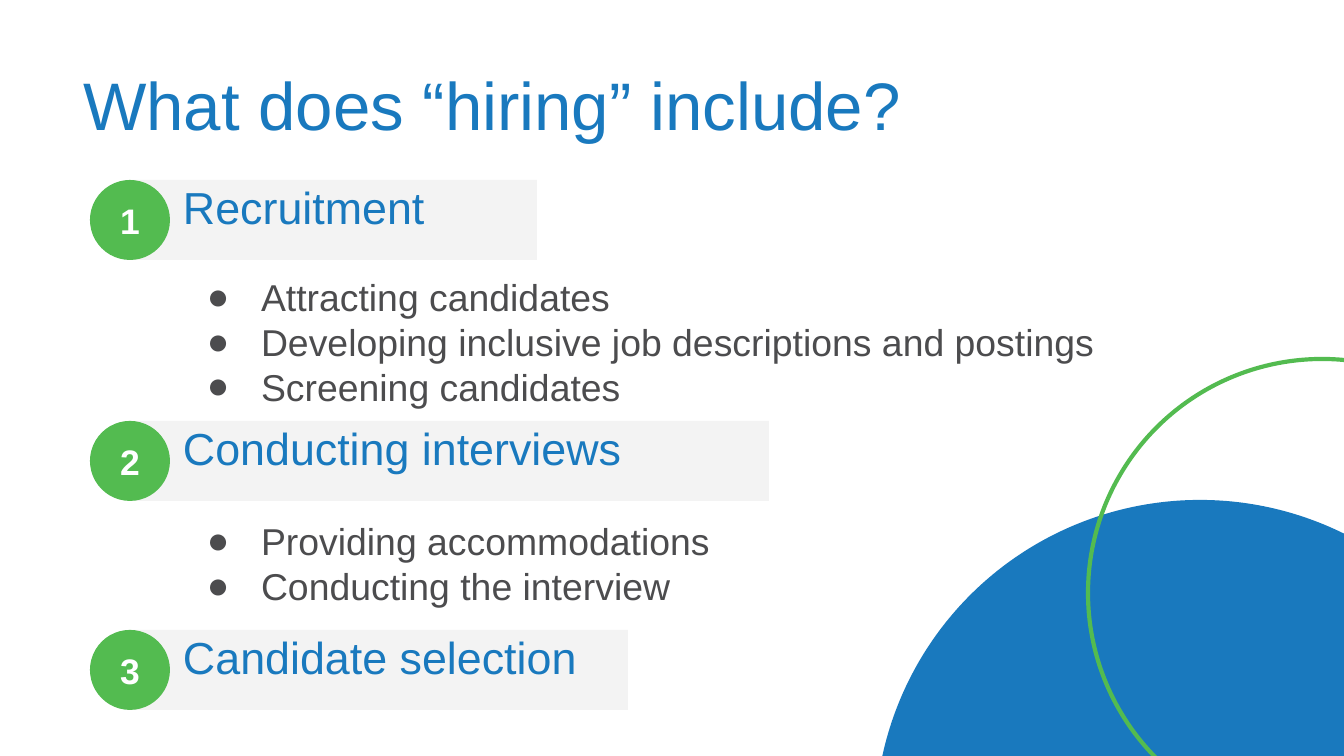
from lxml.etree import SubElement
from pptx import Presentation
from pptx.dml.color import RGBColor
from pptx.enum.shapes import MSO_SHAPE as Shape
from pptx.enum.text import MSO_ANCHOR as Anchor, MSO_AUTO_SIZE as AutoSize, PP_ALIGN as Align
from pptx.oxml.ns import qn
from pptx.util import Pt

BLUE = RGBColor(0x19, 0x79, 0xBE)
GREEN = RGBColor(0x53, 0xBB, 0x50)
PALE_GRAY = RGBColor(0xF3, 0xF3, 0xF3)
DARK_GRAY = RGBColor(0x4C, 0x4C, 0x4E)
WHITE = RGBColor(0xFF, 0xFF, 0xFF)
FONT = "Arial"

PX_PER_INCH = 134.4
SLIDE_SIZE = (1344, 756)
BADGE_SIZE = 80
PADDING = 13

# Heading, top, bar width, bullets and their box (left, top, width, height)
STEPS = [
    ("Recruitment", 180, 409,
     ["Attracting candidates",
      "Developing inclusive job descriptions and postings",
      "Screening candidates"],
     (181, 261, 1020, 163)),
    ("Conducting interviews", 421, 641,
     ["Providing accommodations", "Conducting the interview"],
     (181, 505, 668, 122)),
    ("Candidate selection", 630, 500, [], None),
]


def px(length):
    return round(length * 914400 / PX_PER_INCH)


def place(shape, box):
    shape.left, shape.top, shape.width, shape.height = map(px, box)


def set_frame(text_frame, margins, anchor):
    text_frame.word_wrap = True
    text_frame.auto_size = AutoSize.NONE
    text_frame.vertical_anchor = anchor
    (text_frame.margin_left, text_frame.margin_top,
     text_frame.margin_right, text_frame.margin_bottom) = map(px, margins)


def style(paragraph, size, color, bold=False, align=Align.LEFT):
    paragraph.alignment = align
    for run in paragraph.runs:
        font = run.font
        font.name, font.size, font.bold = FONT, Pt(size), bold
        font.color.rgb = color


def add_filled(slide, kind, box, color):
    shape = slide.shapes.add_shape(kind, *map(px, box))
    shape.shadow.inherit = False
    shape.fill.solid()
    shape.fill.fore_color.rgb = color
    shape.line.fill.background()
    return shape


def add_corner_circles(slide):
    add_filled(slide, Shape.OVAL, (875, 500, 650, 650), BLUE)
    ring = slide.shapes.add_shape(Shape.OVAL, *map(px, (1088, 359, 468, 468)))
    ring.shadow.inherit = False
    ring.fill.background()
    ring.line.color.rgb = GREEN
    ring.line.width = Pt(2.25)


def fill_title(title, box):
    place(title, box)
    set_frame(title.text_frame, (PADDING, 7, PADDING, 7), Anchor.MIDDLE)
    title.text_frame.text = "What does “hiring” include?"
    paragraph = title.text_frame.paragraphs[0]
    paragraph.line_spacing = 0.9
    style(paragraph, 36, BLUE)


def add_heading(slide, number, text, box):
    left, top, width, height = box
    # Bar starts under the middle of the badge
    bar = add_filled(slide, Shape.RECTANGLE, (left + 38, top, width, height), PALE_GRAY)
    set_frame(bar.text_frame, (55, 0, PADDING, 0), Anchor.TOP)
    bar.text_frame.text = text
    style(bar.text_frame.paragraphs[0], 24, BLUE)

    # Numbered badge
    badge = add_filled(slide, Shape.OVAL, (left, top, height, height), GREEN)
    set_frame(badge.text_frame, (0, 0, 0, 0), Anchor.MIDDLE)
    badge.text_frame.text = str(number)
    style(badge.text_frame.paragraphs[0], 19, WHITE, bold=True, align=Align.CENTER)


def add_bullet(paragraph):
    properties = paragraph._p.get_or_add_pPr()
    properties.set("marL", str(px(67)))
    properties.set("indent", str(px(-54)))
    color = SubElement(properties, qn("a:buClr"))
    SubElement(color, qn("a:srgbClr"), val=str(DARK_GRAY))
    SubElement(properties, qn("a:buFont"), typeface=FONT)
    SubElement(properties, qn("a:buChar"), char="●")


def fill_list(body, items, box):
    place(body, box)
    set_frame(body.text_frame, [PADDING] * 4, Anchor.TOP)
    body.text_frame.text = "\n".join(items)
    for paragraph in body.text_frame.paragraphs:
        add_bullet(paragraph)
        paragraph.space_before = Pt(0)
        style(paragraph, 20, DARK_GRAY)


def build_slide(presentation):
    # Two Content layout: one title and two lists
    slide = presentation.slides.add_slide(presentation.slide_layouts[3])
    add_corner_circles(slide)
    fill_title(slide.shapes.title, (70, 36, 1159, 146))
    for number, (heading, top, width, items, list_box) in enumerate(STEPS, 1):
        add_heading(slide, number, heading, (90, top, width, BADGE_SIZE))
        if items:
            fill_list(slide.placeholders[number], items, list_box)


def main():
    presentation = Presentation()
    presentation.slide_width, presentation.slide_height = map(px, SLIDE_SIZE)
    build_slide(presentation)
    presentation.save("out.pptx")


if __name__ == "__main__":
    main()
